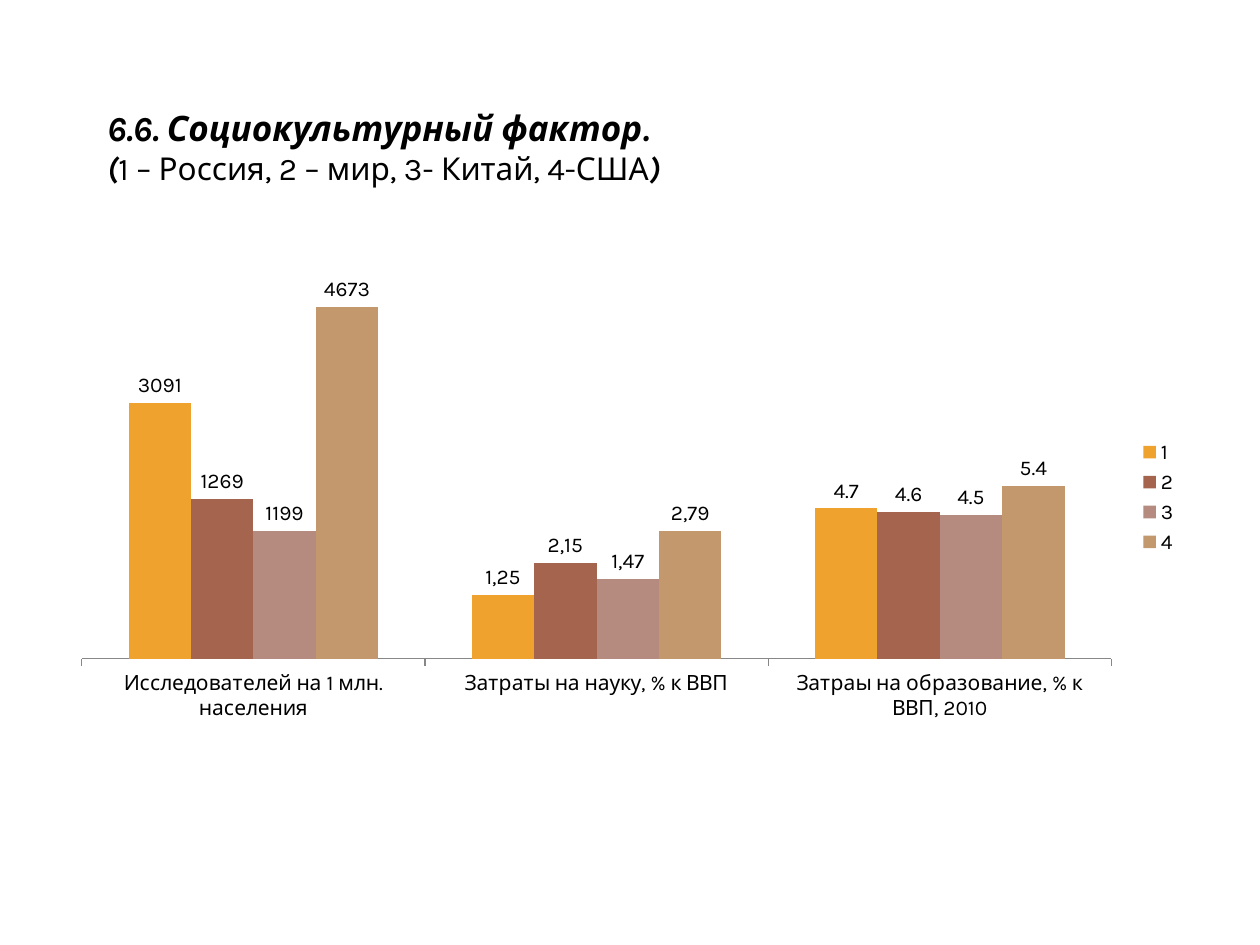
"""Build a slide comparing research and education indicators of four regions."""
from lxml.etree import SubElement
from pptx import Presentation
from pptx.chart.data import CategoryChartData
from pptx.dml.color import RGBColor
from pptx.enum.chart import XL_CHART_TYPE as ChartType, XL_LABEL_POSITION as LabelPos
from pptx.enum.chart import XL_LEGEND_POSITION as LegendPos, XL_TICK_MARK as Tick
from pptx.enum.text import MSO_ANCHOR as Anchor
from pptx.oxml.ns import qn
from pptx.util import Inches, Pt

FONT = "Karla"
COLORS = {"text": "000000", "axis": "878787", "1": "F0A22E", "2": "A5644E",
          "3": "B58B80", "4": "C3986D"}
HEADING = [
    [("6.6. Социокультурный фактор.", 20, True)],
    [("(", 18, True), ("1 – Россия, 2 – мир, 3- Китай, 4-США", 18, False), (")", 18, True)],
]
INDICATORS = ["Исследователей на 1 млн. населения", "Затраты на науку, % к ВВП",
              "Затраы на образование, % к ВВП, 2010"]
REGIONS = [
    ("1", (8, 2, 4.7), ("3091", "1,25")),
    ("2", (5, 3, 4.6), ("1269", "2,15")),
    ("3", (4, 2.5, 4.5), ("1199", "1,47")),
    ("4", (11, 4, 5.4), ("4673", "2,79")),
]
PLOT_AREA = {"x": 0.02, "y": 0.02, "w": 0.91, "h": 0.83}


def color(name):
    return RGBColor.from_string(COLORS[name])


def style(font, size):
    font.name, font.size = FONT, Pt(size)
    font.color.rgb = color("text")


def add_heading(slide):
    heading = slide.shapes.add_textbox(Inches(0.55), Inches(0.61), Inches(7.11), Inches(1.11))
    frame = heading.text_frame
    frame.word_wrap = True
    frame.vertical_anchor = Anchor.MIDDLE
    frame.margin_left = Inches(0.3)
    for index, line in enumerate(HEADING):
        paragraph = frame.add_paragraph() if index else frame.paragraphs[0]
        for wording, size, emphasis in line:
            run = paragraph.add_run()
            run.text = wording
            style(run.font, size)
            run.font.bold = run.font.italic = emphasis


def place_plot(chart):
    plot_area = chart.plots[0]._element.getparent()
    layout = plot_area.get_or_add_layout() if hasattr(plot_area, "get_or_add_layout") else None
    if layout is None:
        layout = plot_area.find(qn("c:layout"))
    if layout is None:
        layout = SubElement(plot_area, qn("c:layout"))
        plot_area.insert(0, layout)
    manual = SubElement(layout, qn("c:manualLayout"))
    settings = {"layoutTarget": "inner", "xMode": "edge", "yMode": "edge", **PLOT_AREA}
    for tag, value in settings.items():
        SubElement(manual, qn(f"c:{tag}")).set("val", str(value))


def add_indicators(slide):
    indicators = CategoryChartData()
    indicators.categories = INDICATORS
    for region, heights, _ in REGIONS:
        indicators.add_series(region, heights)
    chart = slide.shapes.add_chart(ChartType.COLUMN_CLUSTERED, Inches(0.47), Inches(2.11),
                                   Inches(8.98), Inches(3.67), indicators).chart
    style(chart.font, 12)
    chart.has_title = False
    chart.has_legend = True
    chart.legend.position = LegendPos.RIGHT
    chart.legend.include_in_layout = False

    chart.value_axis.visible = False
    chart.value_axis.has_major_gridlines = False
    chart.value_axis.minimum_scale, chart.value_axis.maximum_scale = 0, 12
    chart.category_axis.major_tick_mark = Tick.OUTSIDE
    chart.category_axis.format.line.color.rgb = color("axis")

    columns = chart.plots[0]
    columns.gap_width, columns.overlap = 150, 0
    columns.vary_by_categories = False
    for series, (region, _, captions) in zip(columns.series, REGIONS):
        series.format.fill.solid()
        series.format.fill.fore_color.rgb = color(region)
        series.data_labels.show_value = True
        series.data_labels.position = LabelPos.OUTSIDE_END
        style(series.data_labels.font, 12)
        for index, caption in enumerate(captions):
            label = series.points[index].data_label
            label.text_frame.text = caption
            style(label.text_frame.paragraphs[0].runs[0].font, 12)
            label.position = LabelPos.OUTSIDE_END
    place_plot(chart)


def main():
    deck = Presentation()
    deck.slide_width, deck.slide_height = Inches(10), Inches(7.5)
    slide = deck.slides.add_slide(deck.slide_layouts[6])
    add_heading(slide)
    add_indicators(slide)
    deck.save("out.pptx")


if __name__ == "__main__":
    main()
